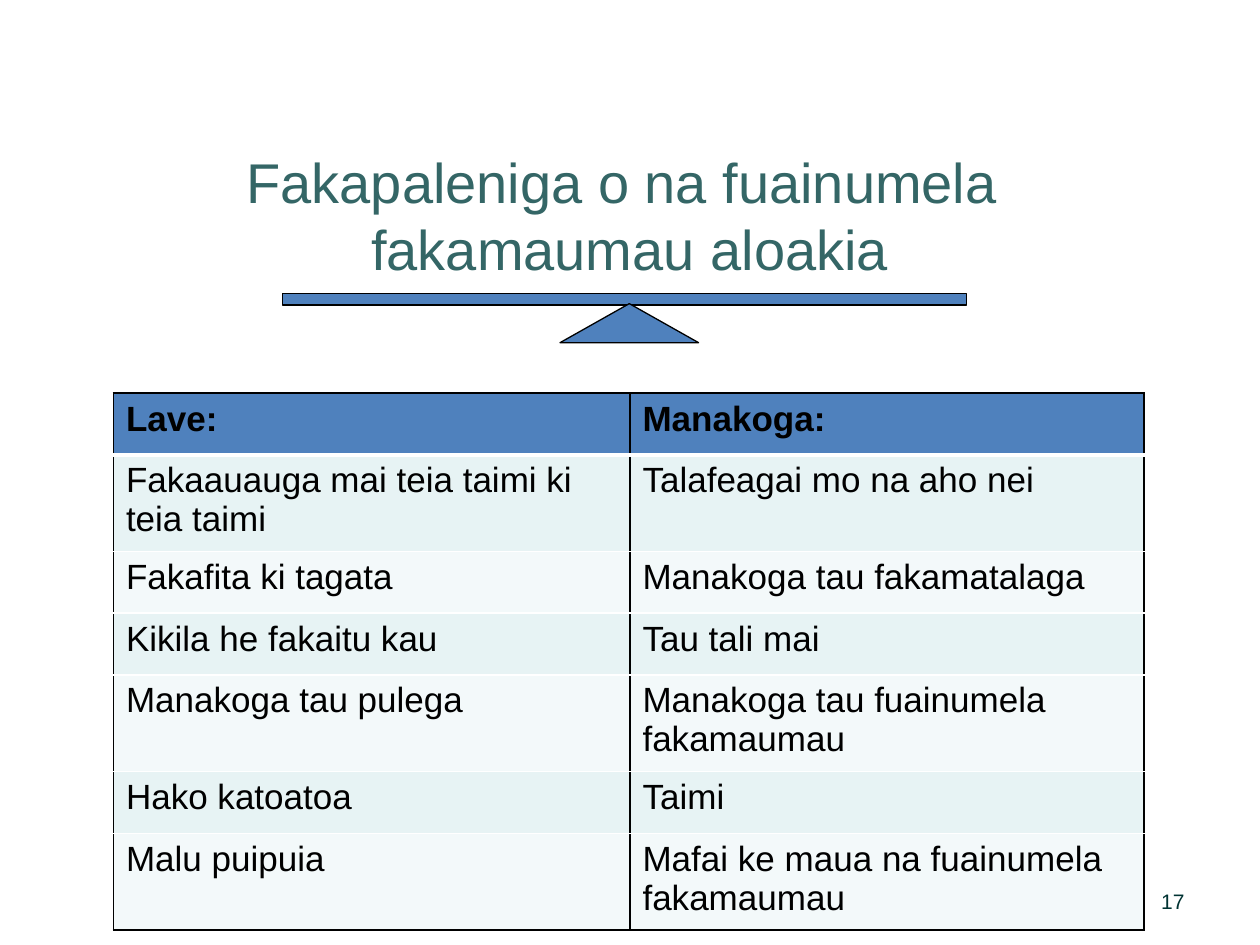
from dataclasses import dataclass

from lxml import etree
from pptx import Presentation
from pptx import util as u
from pptx.dml.color import RGBColor
from pptx.enum import shapes, text
from pptx.oxml import ns


@dataclass(frozen=True)
class Theme:
    font: str = "Arial"
    title: str = "346666"
    number: str = "003333"
    ink: str = "000000"
    accent: str = "4F81BD"
    bands: tuple = ("E7F3F4", "F3F9FA")
    rule: str = "FFFFFF"
    title_size: int = 32
    table_size: int = 20
    number_size: int = 12


THEME = Theme()
TITLE = "Fakapaleniga o na fuainumela \vfakamaumau aloakia"
ROWS = [
    ("Lave:", "Manakoga:"),
    ("Fakaauauga mai teia taimi ki teia taimi", "Talafeagai mo na aho nei"),
    ("Fakafita ki tagata", "Manakoga tau fakamatalaga"),
    ("Kikila he fakaitu kau", "Tau tali mai"),
    ("Manakoga tau pulega", "Manakoga tau fuainumela fakamaumau"),
    ("Hako katoatoa", "Taimi"),
    ("Malu puipuia", "Mafai ke maua na fuainumela fakamaumau"),
]


def inches(box):
    return [u.Inches(length) for length in box]


def write(frame, words, color, **font_values):
    frame.word_wrap = True
    paragraph = frame.paragraphs[0]
    paragraph.text = words
    for run in paragraph.runs:
        run.font.color.rgb = RGBColor.from_string(color)
        for name, value in {"name": THEME.font, **font_values}.items():
            setattr(run.font, name, value)
    return paragraph


def add_label(slide, box, words, color, size, align):
    frame = slide.shapes.add_textbox(*inches(box)).text_frame
    frame.vertical_anchor = text.MSO_ANCHOR.MIDDLE
    write(frame, words, color, size=u.Pt(size)).alignment = align


def add_balance(slide, box):
    """Draw a beam across the top of the box, resting on a centred pivot."""
    left, top, width, height = box
    beam_height, pivot_width, pivot_height = 0.09, 1.1, 0.31
    pivot_left = left + (width - pivot_width) / 2 + 0.04
    pivot_top = top + height - pivot_height
    kinds = shapes.MSO_SHAPE
    parts = [
        (kinds.FLOWCHART_PROCESS, (left, top, width, beam_height)),
        (kinds.ISOSCELES_TRIANGLE, (pivot_left, pivot_top, pivot_width, pivot_height)),
    ]
    for kind, part_box in parts:
        part = slide.shapes.add_shape(kind, *inches(part_box))
        part.shadow.inherit = False
        part.fill.solid()
        part.fill.fore_color.rgb = RGBColor.from_string(THEME.accent)
        part.line.color.rgb = RGBColor.from_string(THEME.ink)
        part.line.width = u.Pt(0.75)


def set_borders(cell, borders):
    """Put the borders, given as side: (colour, points), ahead of the cell fill."""
    properties = cell._tc.get_or_add_tcPr()
    for index, (side, (color, points)) in enumerate(borders.items()):
        line = etree.Element(ns.qn(f"a:ln{side}"), w=str(u.Pt(points)))
        fill = etree.SubElement(line, ns.qn("a:solidFill"))
        etree.SubElement(fill, ns.qn("a:srgbClr"), val=color)
        properties.insert(index, line)


def add_comparison(slide, box, rows, first_width, row_height):
    left, top, width, height = inches(box)
    table = slide.shapes.add_table(len(rows), 2, left, top, width, height).table
    table.columns[0].width = u.Inches(first_width)
    table.columns[1].width = width - u.Inches(first_width)
    last = len(rows) - 1
    outer, inner, header_rule = (THEME.ink, 1), (THEME.rule, 1), (THEME.rule, 3)
    for i, row in enumerate(rows):
        table.rows[i].height = u.Inches(row_height)
        above = {0: outer, 1: header_rule}.get(i, inner)
        below = {0: header_rule, last: outer}.get(i, inner)
        color = THEME.bands[(i - 1) % 2] if i else THEME.accent
        for cell, words in zip(table.rows[i].cells, row):
            cell.fill.solid()
            cell.fill.fore_color.rgb = RGBColor.from_string(color)
            set_borders(cell, {"L": outer, "R": outer, "T": above, "B": below})
            write(cell.text_frame, words, THEME.ink,
                  size=u.Pt(THEME.table_size), bold=i == 0)


def main():
    deck = Presentation()
    deck.slide_width, deck.slide_height = inches((10, 7.5))
    slide = deck.slides.add_slide(deck.slide_layouts[6])
    align = text.PP_ALIGN
    add_label(slide, (7.17, 6.95, 2.33, 0.4), "17",
              THEME.number, THEME.number_size, align.RIGHT)
    add_label(slide, (0.5, 1.24, 9, 0.92), TITLE,
              THEME.title, THEME.title_size, align.CENTER)
    add_balance(slide, (2.24, 2.33, 5.43, 0.39))
    add_comparison(slide, (0.9, 3.12, 8.18, 3.43), ROWS,
                   first_width=4.1, row_height=0.49)
    deck.save("out.pptx")


if __name__ == "__main__":
    main()
